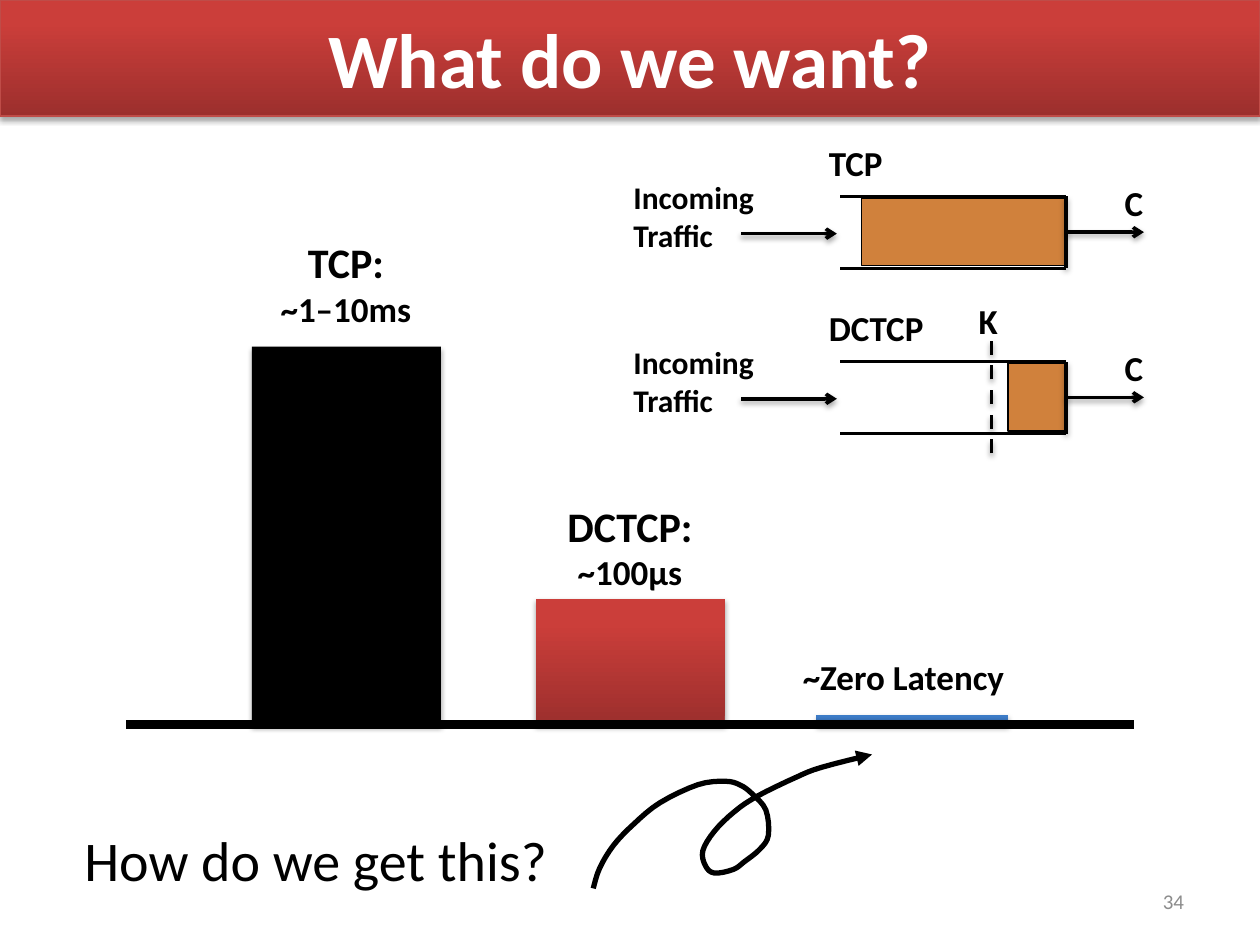
from lxml.etree import SubElement
from pptx import Presentation
from pptx.dml.color import RGBColor as RGB
from pptx.enum.dml import MSO_LINE_DASH_STYLE as DASH
from pptx.enum.shapes import MSO_CONNECTOR as CONNECTOR, MSO_SHAPE as SHAPE
from pptx.enum.text import MSO_ANCHOR as ANCHOR, PP_ALIGN as ALIGN
from pptx.oxml.ns import qn
from pptx.util import Cm, Pt


class Theme:
    font = "Calibri"
    black = RGB(0, 0, 0)
    white = RGB(255, 255, 255)
    gray = RGB(0x8C, 0x8C, 0x8C)
    orange = RGB(0xD0, 0x81, 0x3C)
    header_edge = RGB(0xBF, 0x4C, 0x48)
    red = (RGB(0x9C, 0x2F, 0x2D), RGB(0xCB, 0x3E, 0x3A))
    blue = (RGB(0x2F, 0x5F, 0x99), RGB(0x3D, 0x7C, 0xC7))
    title, question, system, label, traffic, number = 44, 32, 24, 20, 18, 12


prs = Presentation()
prs.slide_width, prs.slide_height = Cm(25.4), Cm(19.05)
slide = prs.slides.add_slide(prs.slide_layouts[5])
shapes = slide.shapes
shadowed = []


def add_text(box, lines, align=ALIGN.LEFT, color=Theme.black, bold=True, wrap=True):
    """Add a text box at box (cm), with one paragraph per (wording, size)."""
    frame = shapes.add_textbox(*map(Cm, box)).text_frame
    frame.word_wrap = wrap
    for i, (wording, size) in enumerate(lines):
        paragraph = frame.add_paragraph() if i else frame.paragraphs[0]
        paragraph.text = wording
        paragraph.alignment = align
        font = paragraph.font
        font.name, font.size, font.bold = Theme.font, Pt(size), bold
        font.color.rgb = color
    return frame


def add_line(x1, y1, x2, y2, width=2, arrow=False, shadow=True):
    line = shapes.add_connector(CONNECTOR.STRAIGHT, Cm(x1), Cm(y1), Cm(x2), Cm(y2))
    line.line.color.rgb = Theme.black
    line.line.width = Pt(width)
    if arrow:
        SubElement(line.line._get_or_add_ln(), qn("a:tailEnd"), type="arrow")
    if shadow:
        shadowed.append(line)
    else:
        SubElement(line._element.spPr, qn("a:effectLst"))
    return line


# Header and title
title = shapes.title
title.left, title.top, title.width, title.height = 0, 0, Cm(25.4), Cm(2.34)
title.text_frame.text = "What do we want?"
title.text_frame.vertical_anchor = ANCHOR.MIDDLE
heading = title.text_frame.paragraphs[0]
heading.alignment = ALIGN.CENTER
heading.font.name, heading.font.size = Theme.font, Pt(Theme.title)
heading.font.bold = True
heading.font.color.rgb = Theme.white

header = shapes.add_shape(SHAPE.RECTANGLE, 0, 0, Cm(25.4), Cm(2.34))
header.line.color.rgb = Theme.header_edge
header.line.width = Pt(0.75)
title.element.addprevious(header.element)

number = add_text((18.2, 17.66, 5.92, 1.01), [("34", Theme.number)],
                  ALIGN.RIGHT, Theme.gray, bold=False)
number.vertical_anchor = ANCHOR.MIDDLE

# Latency bars standing on the baseline
baseline = 14.61
filled = [(header, Theme.red)]
for left, width, height, fill in (
    (5.08, 3.81, 7.62, Theme.black),
    (10.8, 3.81, 2.54, Theme.red),
    (16.46, 3.86, 0.2, Theme.blue),
):
    bar = shapes.add_shape(SHAPE.RECTANGLE, Cm(left), Cm(baseline - height),
                           Cm(width), Cm(height))
    bar.line.fill.background()
    filled.append((bar, fill))

for shape, fill in filled:
    shadowed.append(shape)
    if isinstance(fill, RGB):
        shape.fill.solid()
        shape.fill.fore_color.rgb = fill
        continue
    shape.fill.gradient()
    shape.fill.gradient_angle = 90
    for stop, color, position in zip(shape.fill.gradient_stops, fill, (0, 0.8)):
        stop.color.rgb = color
        stop.position = position

add_line(2.54, baseline, 22.86, baseline, width=5, shadow=False)

for box, lines in (
    ((4.65, 4.65, 4.65, 2.13), [("TCP:", Theme.system), ("~1–10ms", Theme.label)]),
    ((10.16, 9.96, 5.08, 2.13), [("DCTCP:", Theme.system), ("~100μs", Theme.label)]),
    ((15.04, 13.08, 6.35, 1.12), [("~Zero Latency", Theme.label)]),
):
    add_text(box, lines, ALIGN.CENTER)

# Question and the looping arrow to the last bar
add_text((1.45, 16.51, 9.98, 1.62), [("How do we get this?", Theme.question)],
         bold=False, wrap=False)

loop = [
    (11.96, 17.91), (12.09, 17.5), (12.37, 17.04), (12.78, 16.61), (13.31, 16.18),
    (14.07, 15.82), (14.61, 15.75), (14.91, 15.82), (15.16, 16), (15.44, 16.33),
    (15.49, 16.84), (15.32, 17.12), (15.01, 17.37), (14.78, 17.53), (14.4, 17.6),
    (14.22, 17.45), (14.17, 17.15), (14.4, 16.76), (14.81, 16.36), (15.27, 16.05),
    (16.05, 15.67), (16.56, 15.47), (17.58, 15.21),
]
# Catmull-Rom spline through the loop points, four steps between neighbours
padded = [loop[0], *loop, loop[-1]]
curve = []
for quad in zip(padded, padded[1:], padded[2:], padded[3:]):
    for t in (0.25, 0.5, 0.75, 1):
        curve.append(tuple(
            Cm((2 * b + (c - a) * t + (2 * a - 5 * b + 4 * c - d) * t ** 2
                + (3 * b - a - 3 * c + d) * t ** 3) / 2)
            for a, b, c, d in zip(*quad)))
builder = shapes.build_freeform(Cm(loop[0][0]), Cm(loop[0][1]))
builder.add_line_segments(curve, close=False)
loop_arrow = builder.convert_to_shape()
loop_arrow.shadow.inherit = False
loop_arrow.fill.background()
loop_arrow.line.color.rgb = Theme.black
loop_arrow.line.width = Pt(3)
SubElement(loop_arrow.line._get_or_add_ln(), qn("a:tailEnd"), type="triangle")

# Switch queues: open at the left, filled from the right
queue_left, queue_right, queue_height = 16.94, 21.49, 1.45
for name, name_width, top, fill_left in (
    ("TCP", 1.65, 3.96, 17.37),
    ("DCTCP", 2.84, 7.29, 20.32),
):
    bottom = top + queue_height
    packets = shapes.add_shape(SHAPE.RECTANGLE, Cm(fill_left), Cm(top + 0.03),
                               Cm(queue_right - fill_left), Cm(1.37))
    packets.shadow.inherit = False
    packets.fill.solid()
    packets.fill.fore_color.rgb = Theme.orange
    packets.line.color.rgb = Theme.black
    packets.line.width = Pt(0.75)
    for y in (top, bottom):
        add_line(queue_left, y, queue_right, y, shadow=False)
    add_line(queue_right, bottom, queue_right, top)
    add_line(queue_right, top + 0.72, 23.06, top + 0.72, arrow=True)
    add_line(14.94, top + 0.75, 16.87, top + 0.75, arrow=True)
    add_text((22.42, top - 0.43, 1.93, 1.12), [("C", Theme.label)])
    add_text((12.52, top - 0.49, 3.61, 1.8), [("Incoming Traffic", Theme.traffic)])
    add_text((16.46, top - 1.24, name_width, 1.12), [(name, Theme.label)])

threshold = add_line(19.99, 9.14, 19.99, 6.78)
threshold.line.dash_style = DASH.DASH
add_text((19.48, 5.92, 1.3, 1.12), [("K", Theme.label)])

# Soft shadow straight below
for shape in shadowed:
    effects = SubElement(shape._element.spPr, qn("a:effectLst"))
    shadow = SubElement(effects, qn("a:outerShdw"), blurRad=str(Pt(3.1)),
                        dist=str(Pt(1.8)), dir="5400000", rotWithShape="0")
    shade = SubElement(shadow, qn("a:srgbClr"), val=str(Theme.black))
    SubElement(shade, qn("a:alpha"), val="35000")

prs.save("out.pptx")
